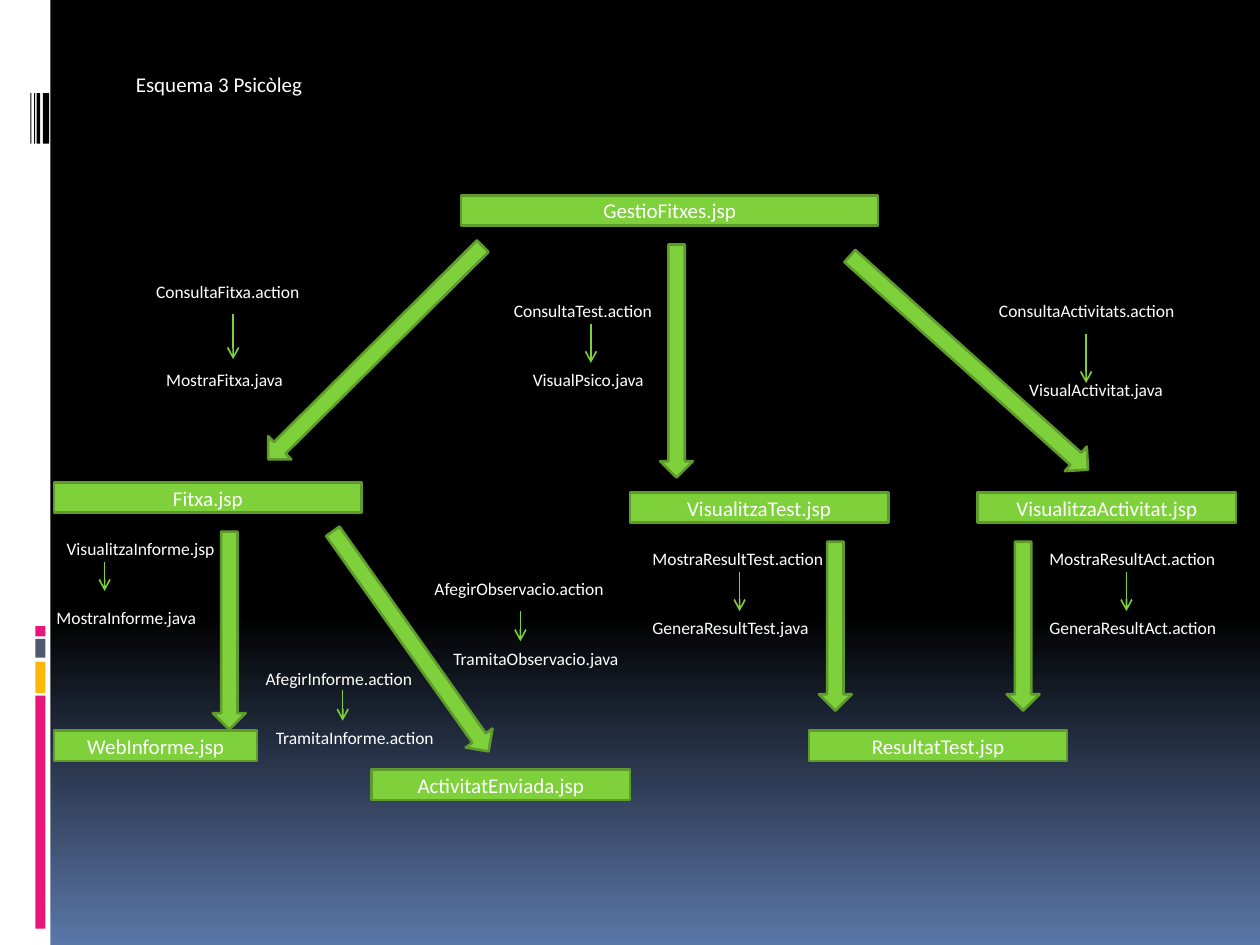
from lxml import etree
from pptx import Presentation
from pptx.dml.color import RGBColor
from pptx.enum.shapes import MSO_CONNECTOR, MSO_SHAPE
from pptx.enum.text import MSO_ANCHOR, PP_ALIGN
from pptx.oxml.ns import qn
from pptx.util import Inches, Pt

RECT, DOWN = MSO_SHAPE.RECTANGLE, MSO_SHAPE.DOWN_ARROW
STRAIGHT = MSO_CONNECTOR.STRAIGHT
CENTER, LEFT = PP_ALIGN.CENTER, PP_ALIGN.LEFT
MIDDLE, TOP = MSO_ANCHOR.MIDDLE, MSO_ANCHOR.TOP

BLACK = RGBColor(0x00, 0x00, 0x00)
WHITE = RGBColor(0xFF, 0xFF, 0xFF)
BLUE = RGBColor(0x5B, 0x77, 0xA8)
PINK = RGBColor(0xEA, 0x15, 0x7A)
AMBER = RGBColor(0xFE, 0xB8, 0x0A)
SLATE = RGBColor(0x4E, 0x5B, 0x6F)
GREEN = RGBColor(0x7F, 0xD1, 0x3B)
DARK_GREEN = RGBColor(0x5E, 0x9B, 0x2C)

SLIDE_W, SLIDE_H = 10, 7.5
PAGE_H, LABEL_H, ARROW_W = 0.24, 0.27, 0.26

# Side band: stripes as (left, width), blocks as (top, height, colour)
STRIPES = [(0.34, 0.05), (0.29, 0.03), (0.27, 0.01), (0.24, 0.01)]
BLOCKS = [(5.52, 1.85, PINK), (5.25, 0.25, AMBER),
          (5.07, 0.15, SLATE), (4.97, 0.08, PINK)]

# Pages: name, left, top, width
PAGES = [
    ("GestioFitxes.jsp", 3.66, 1.55, 3.31),
    ("Fitxa.jsp", 0.43, 3.83, 2.44),
    ("VisualitzaTest.jsp", 5, 3.91, 2.05),
    ("VisualitzaActivitat.jsp", 7.76, 3.91, 2.05),
    ("ResultatTest.jsp", 6.42, 5.8, 2.05),
    ("WebInforme.jsp", 0.43, 5.8, 1.61),
    ("ActivitatEnviada.jsp", 2.95, 6.11, 2.05),
]

# Block arrows between pages: left, top, length, rotation
FLOWS = [
    (2.85, 1.6, 2.4, 45.2), (5.24, 1.94, 1.85, 0), (7.56, 1.61, 2.54, 311.9),
    (1.69, 4.22, 1.57, 0), (3.13, 4.02, 2.14, 324.7),
    (6.5, 4.3, 1.34, 0), (7.99, 4.3, 1.34, 0),
]

# Steps: (caller, left, top, width), (handler, ...), (arrow x, start y, end y)
STEPS = [
    (("ConsultaFitxa.action", 1.14, 2.18, 1.42),
     ("MostraFitxa.java", 1.22, 2.88, 1.15), (1.85, 2.49, 2.85)),
    (("ConsultaTest.action", 3.98, 2.33, 1.33),
     ("VisualPsico.java", 4.13, 2.88, 1.09), (4.69, 2.57, 2.88)),
    (("ConsultaActivitats.action", 7.83, 2.33, 1.61),
     ("VisualActivitat.java", 8.07, 2.96, 1.28), (8.62, 2.65, 3.04)),
    (("VisualitzaInforme.jsp", 0.43, 4.22, 1.39),
     ("MostraInforme.java", 0.35, 4.77, 1.33), (0.83, 4.46, 4.69)),
    (("AfegirObservacio.action", 3.35, 4.54, 1.56),
     ("TramitaObservacio.java", 3.5, 5.09, 1.54), (4.13, 4.85, 5.09)),
    (("AfegirInforme.action", 2.01, 5.25, 1.39),
     ("TramitaInforme.action", 2.09, 5.72, 1.49), (2.72, 5.48, 5.72)),
    (("MostraResultTest.action", 5.08, 4.3, 1.59),
     ("GeneraResultTest.java", 5.08, 4.85, 1.48), (5.87, 4.54, 4.85)),
    (("MostraResultAct.action", 8.23, 4.3, 1.54),
     ("GeneraResultAct.action", 8.23, 4.85, 1.55), (8.94, 4.54, 4.85)),
]


def add_block(s, kind, x, y, w, h, fill, outline=None):
    sp = s.shapes.add_shape(kind, *map(Inches, (x, y, w, h)))
    sp.shadow.inherit = False
    sp.fill.solid()
    sp.fill.fore_color.rgb = fill
    if outline is None:
        sp.line.fill.background()
    else:
        sp.line.color.rgb = outline
        sp.line.width = Pt(1.5)
    return sp


def write(sp, text, size, align=LEFT, anchor=TOP):
    tf = sp.text_frame
    tf.word_wrap = False
    tf.vertical_anchor = anchor
    p = tf.paragraphs[0]
    p.alignment = align
    r = p.add_run()
    r.text = text
    r.font.color.rgb = WHITE
    for name, value in {"name": "Calibri", "size": Pt(size)}.items():
        setattr(r.font, name, value)


def add_label(s, text, x, y, w, h=LABEL_H, size=10):
    write(s.shapes.add_textbox(*map(Inches, (x, y, w, h))), text, size)


def add_thin_arrow(s, x, start, end):
    line = s.shapes.add_connector(STRAIGHT, *map(Inches, (x, start, x, end)))
    line.line.color.rgb = GREEN
    line.line.width = Pt(0.94)
    etree.SubElement(line.line._get_or_add_ln(), qn("a:tailEnd"), type="arrow")
    etree.SubElement(line._element.spPr, qn("a:effectLst"))


def main():
    prs = Presentation()
    prs.slide_width, prs.slide_height = Inches(SLIDE_W), Inches(SLIDE_H)
    s = prs.slides.add_slide(prs.slide_layouts[6])

    # Background: black down to 65 %, then fading to blue
    bg = s.background.fill
    bg.gradient()
    bg.gradient_angle = 270
    for stop, position, color in zip(bg.gradient_stops, (0.65, 1), (BLACK, BLUE)):
        stop.position = position
        stop.color.rgb = color

    # Side band
    add_block(s, RECT, 0, 0, 0.4, SLIDE_H, WHITE)
    for x, w in STRIPES:
        add_block(s, RECT, x, 0.74, w, 0.4, BLACK)
    for y, h, color in BLOCKS:
        add_block(s, RECT, 0.28, y, 0.08, h, color)

    # Title
    add_label(s, "Esquema 3 Psicòleg", 0.98, 0.52, 1.57, 0.3, 12)

    # Pages and the flows between them
    for name, x, y, w in PAGES:
        page = add_block(s, RECT, x, y, w, PAGE_H, GREEN, DARK_GREEN)
        write(page, name, 12, CENTER, MIDDLE)
    for x, y, length, rotation in FLOWS:
        flow = add_block(s, DOWN, x, y, ARROW_W, length, GREEN, DARK_GREEN)
        flow.rotation = rotation

    # Steps beside the flows
    for caller, handler, arrow in STEPS:
        add_label(s, *caller)
        add_label(s, *handler)
        add_thin_arrow(s, *arrow)

    prs.save("out.pptx")


if __name__ == "__main__":
    main()
